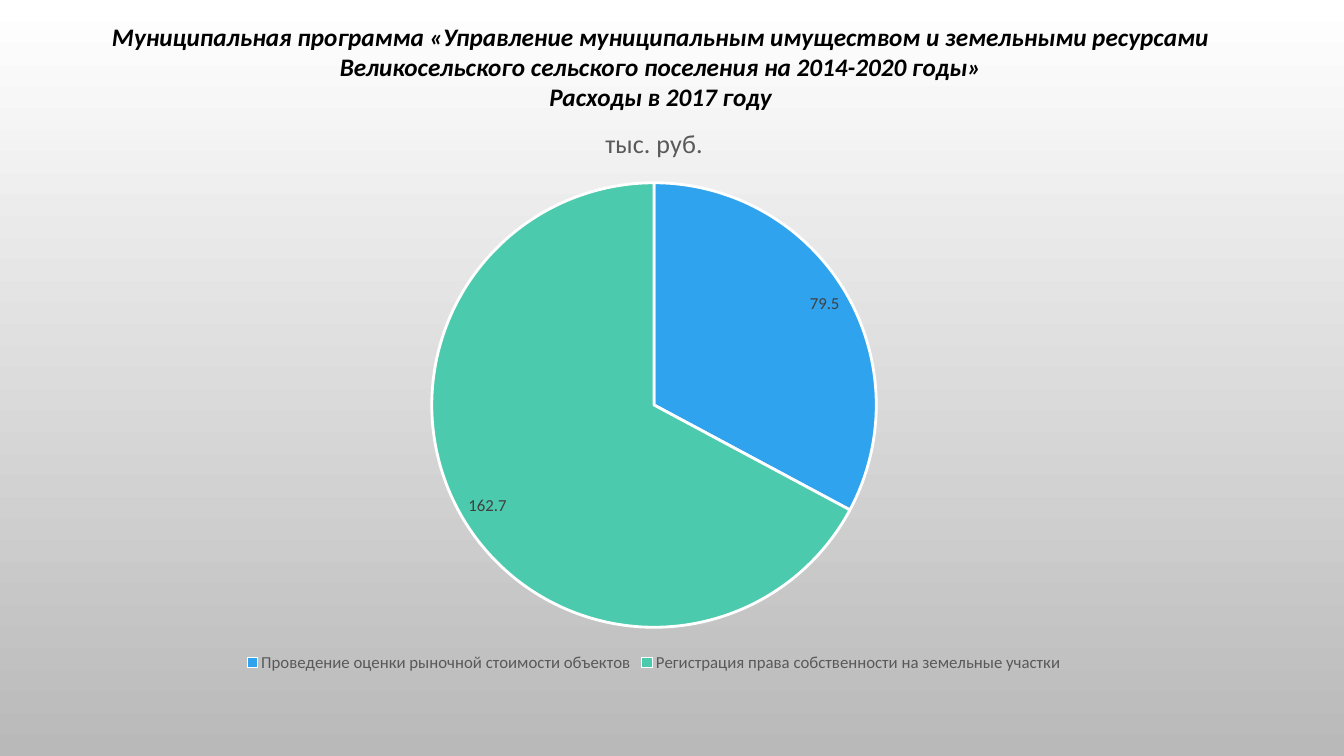
from pptx import Presentation
from pptx.util import Pt
from pptx.dml.color import RGBColor
from pptx.chart.data import CategoryChartData as PieData
from pptx.enum.chart import XL_CHART_TYPE as Kind
from pptx.enum.chart import XL_LABEL_POSITION as Spot
from pptx.enum.chart import XL_LEGEND_POSITION as Side
from pptx.enum.text import PP_ALIGN as Align, MSO_AUTO_SIZE as Fit

HUES = {"top": "FFFFFF", "base": "B9B9B9", "ink": "000000", "gray": "595959",
        "label": "404040", "edge": "FFFFFF", "blue": "2FA3EE", "green": "4BCAAD"}
UNIT = "тыс. руб."
COSTS = [("Проведение оценки рыночной стоимости объектов", 79.5, "blue"),
         ("Регистрация права собственности на земельные участки", 162.7, "green")]
HEAD = ["Муниципальная программа «Управление муниципальным имуществом и земельными "
        "ресурсами Великосельского сельского поселения на 2014-2020 годы»",
        "Расходы в 2017 году"]


def hue(name):
    """Return the named colour."""
    return RGBColor.from_string(HUES[name])


def style(font, size, color, **more):
    """Apply format values to a font."""
    for key, value in {"name": "Calibri", "size": Pt(size), "bold": False, **more}.items():
        setattr(font, key, value)
    font.color.rgb = hue(color)


def paint(slide):
    """Fill the background with a vertical gradient."""
    fill = slide.background.fill
    fill.gradient()
    fill.gradient_angle = 270
    for stop, name in zip(fill.gradient_stops, ("top", "base")):
        stop.color.rgb = hue(name)


def add_head(slide, box):
    """Place the centred heading in the box."""
    frame = slide.shapes.add_textbox(*map(Pt, box)).text_frame
    frame.word_wrap = True
    frame.auto_size = Fit.SHAPE_TO_FIT_TEXT
    frame.text = "\n".join(HEAD)
    for para in frame.paragraphs:
        para.alignment = Align.CENTER
        style(para.runs[0].font, 18, "ink", bold=True, italic=True)


def add_pie(slide, box):
    """Place the pie of costs in the box."""
    data = PieData(number_format="0.0")
    data.categories = [name for name, _, _ in COSTS]
    data.add_series(UNIT, [cost for _, cost, _ in COSTS])
    chart = slide.shapes.add_chart(Kind.PIE, *map(Pt, box), data).chart
    style(chart.font, 10, "ink")

    chart.has_title = True
    title = chart.chart_title
    title.include_in_layout = False
    title.text_frame.text = UNIT
    style(title.text_frame.paragraphs[0].runs[0].font, 18.6, "gray")

    chart.has_legend = True
    chart.legend.position = Side.BOTTOM
    chart.legend.include_in_layout = False
    style(chart.legend.font, 12, "gray")

    plot = chart.plots[0]
    plot.vary_by_categories = True
    series = plot.series[0]
    for index, (_, _, color) in enumerate(COSTS):
        form = series.points[index].format
        form.fill.solid()
        form.fill.fore_color.rgb = hue(color)
        form.line.color.rgb = hue("edge")
        form.line.width = Pt(2)

    labels = series.data_labels
    labels.show_value = True
    labels.position = Spot.INSIDE_END
    style(labels.font, 12, "label")


def main():
    """Build and save the slide."""
    deck = Presentation()
    deck.slide_width, deck.slide_height = Pt(960), Pt(540)
    slide = deck.slides.add_slide(deck.slide_layouts[6])
    paint(slide)
    add_head(slide, (44.6, 11.5, 854.6, 72.7))
    add_pie(slide, (82, 74.2, 770.4, 409))
    deck.save("out.pptx")


if __name__ == "__main__":
    main()
